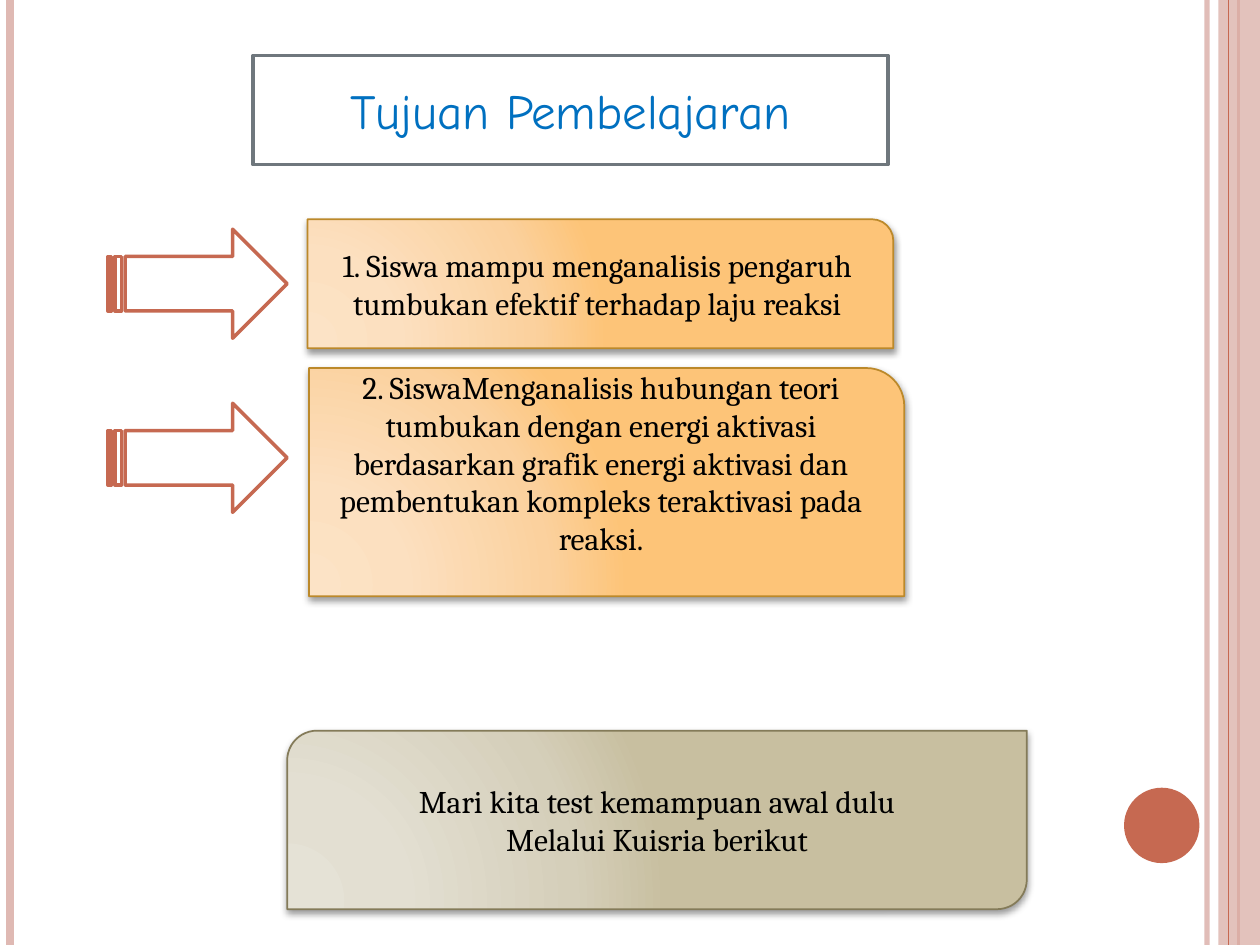
from lxml.etree import SubElement
from pptx import Presentation
from pptx.dml.color import RGBColor
from pptx.enum.shapes import MSO_CONNECTOR as Connector, MSO_SHAPE as Shape
from pptx.enum.text import MSO_ANCHOR as Anchor, PP_ALIGN as Align
from pptx.oxml.ns import qn
from pptx.util import Cm, Pt

WIDTH, HEIGHT = 25.4, 19.05
RUST, PINK, WHITE = "C66951", "DFB9B3", "FFFFFF"
ORANGE = [(0, "FCE3C6"), (30, "FCE0C0"), (75, "FBD19E"), (100, "FDC478")]
KHAKI = [(0, "E5E2D6"), (30, "E3DFD2"), (75, "D5CFBA"), (100, "C8BFA0")]


def rgb(color):
    return RGBColor.from_string(color)


def node(parent, tag, **attributes):
    return SubElement(parent, qn(tag), {k: str(v) for k, v in attributes.items()})


def set_alpha(properties, percent):
    """Make the solid colour found in a shape's properties translucent."""
    color = next(properties.iter(qn("a:srgbClr")))
    node(color, "a:alpha", val=percent * 1000)


def write(shape, text, size=18, font="Cambria", color="000000",
          anchor=Anchor.MIDDLE, top=0.13):
    frame = shape.text_frame
    frame.word_wrap = True
    frame.vertical_anchor = anchor
    frame.margin_top = Cm(top)
    frame.text = text
    for paragraph in frame.paragraphs:
        paragraph.alignment = Align.CENTER
        for run in paragraph.runs:
            run.font.size = Pt(size)
            run.font.name = font
            run.font.color.rgb = rgb(color)


class Board:
    """Holds the style and the current slide."""

    def __init__(self, slide):
        self.slide = slide

    def paint(self, shape, fill, line=None, weight=1):
        shape.fill.solid()
        shape.fill.fore_color.rgb = rgb(fill)
        if line:
            shape.line.color.rgb = rgb(line)
            shape.line.width = Pt(weight)
        else:
            shape.line.fill.background()

    def shape(self, kind, box, fill, line=None, weight=1):
        shape = self.slide.shapes.add_shape(kind, *map(Cm, box))
        shape.shadow.inherit = False
        self.paint(shape, fill, line, weight)
        return shape

    def title(self, text, box):
        title = self.slide.shapes.title
        title.left, title.top, title.width, title.height = map(Cm, box)
        geometry = node(title._element.spPr, "a:prstGeom", prst="roundRect")
        node(geometry, "a:avLst")
        self.paint(title, WHITE, "6F777D", 2)
        write(title, text, size=28, font="Comic Neue", color="0070C0")

    def rule(self, x, color, weight, alpha=100):
        """Draw a vertical line over the full height of the slide."""
        line = self.slide.shapes.add_connector(
            Connector.STRAIGHT, Cm(x), 0, Cm(x), Cm(HEIGHT))
        line.line.color.rgb = rgb(color)
        line.line.width = Pt(weight)
        properties = line._element.spPr
        if alpha < 100:
            set_alpha(properties, alpha)
        node(properties, "a:effectLst")

    def card(self, kind, box, text, stops, line, **text_format):
        card = self.shape(kind, box, WHITE, line)
        properties = card._element.spPr
        solid = properties.find(qn("a:solidFill"))
        gradient = node(properties, "a:gradFill", rotWithShape=1)
        properties.replace(solid, gradient)
        stop_list = node(gradient, "a:gsLst")
        for position, color in stops:
            stop = node(stop_list, "a:gs", pos=position * 1000)
            node(stop, "a:srgbClr", val=color)
        circle = node(gradient, "a:path", path="circle")
        node(circle, "a:fillToRect", l=5000, t=100000, r=120000, b=10000)
        shadow = node(properties.find(qn("a:effectLst")), "a:outerShdw",
                      blurRad=Pt(4), dist=Pt(2), dir=5400000, rotWithShape=0)
        node(node(shadow, "a:srgbClr", val="000000"), "a:alpha", val=40000)
        write(card, text, **text_format)


def main():
    deck = Presentation()
    deck.slide_width, deck.slide_height = Cm(WIDTH), Cm(HEIGHT)
    board = Board(deck.slides.add_slide(deck.slide_layouts[5]))

    board.rule(24.33, PINK, 3, alpha=93)
    board.rule(0.2, PINK, 4.5)
    board.rule(24.97, RUST, 1.5)
    band = board.shape(Shape.RECTANGLE, (24.56, 0, 0.84, HEIGHT), PINK)
    set_alpha(band._element.spPr, 87)
    board.rule(24.77, RUST, 0.75)
    board.shape(Shape.OVAL, (22.66, 15.88, 1.52, 1.52), RUST)

    board.title("Tujuan Pembelajaran", (5.1, 1.12, 12.8, 2.2))

    goals = [
        (4.62, (6.2, 4.42, 11.81, 2.6),
         "1. Siswa mampu menganalisis pengaruh tumbukan efektif "
         "terhadap laju reaksi", {}),
        (8.13, (6.23, 7.42, 12, 4.6),
         "2. SiswaMenganalisis hubungan teori tumbukan dengan energi aktivasi "
         "berdasarkan grafik energi aktivasi dan pembentukan kompleks "
         "teraktivasi pada reaksi.", {"anchor": Anchor.TOP, "top": 0}),
    ]
    for arrow_top, box, goal, text_format in goals:
        board.shape(Shape.STRIPED_RIGHT_ARROW, (2.18, arrow_top, 3.61, 2.2),
                    WHITE, RUST, 2)
        board.card(Shape.ROUND_1_RECTANGLE, box, goal, ORANGE, "BC892A",
                   **text_format)

    board.card(Shape.ROUND_2_DIAG_RECTANGLE, (5.79, 14.73, 14.91, 3.6),
               "Mari kita test kemampuan awal dulu\nMelalui Kuisria berikut",
               KHAKI, "847B59")

    deck.save("out.pptx")


if __name__ == "__main__":
    main()
